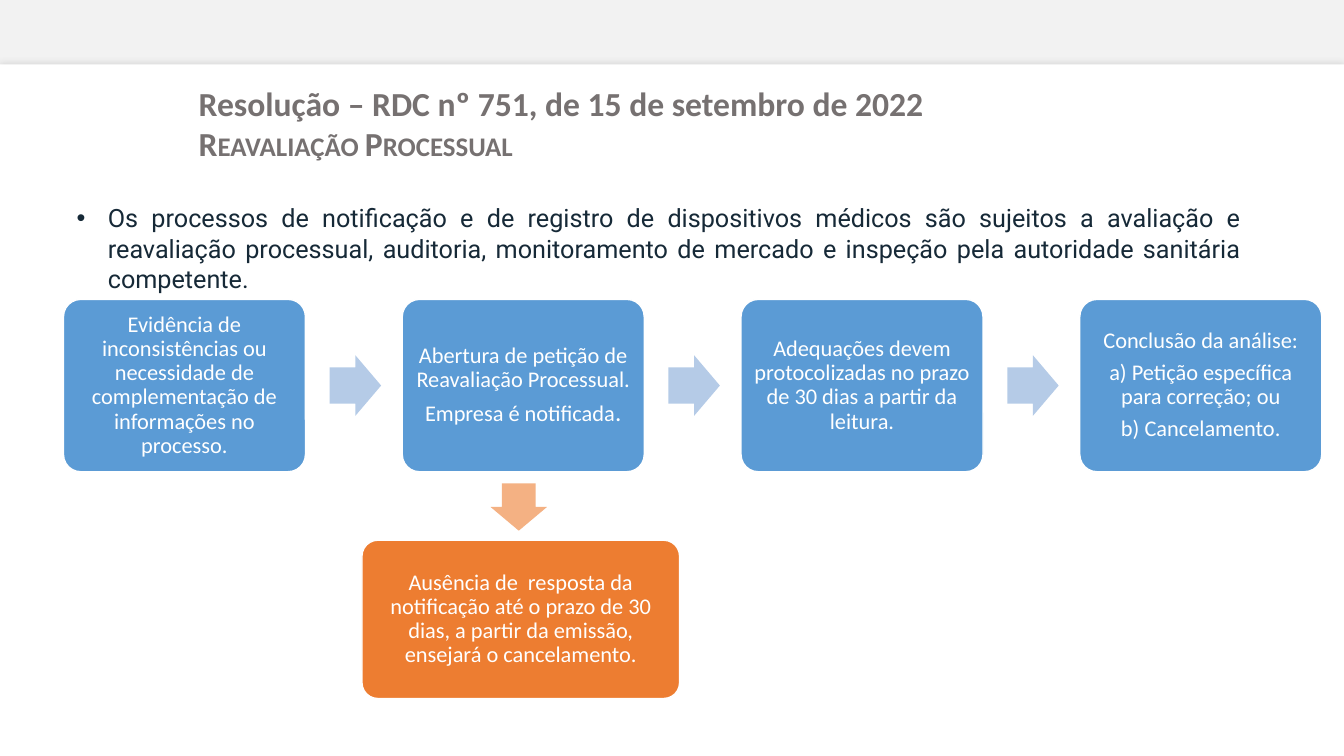
"""Builds the slide on process re-evaluation under RDC 751/2022."""
from dataclasses import dataclass

import lxml.etree
import pptx
import pptx.dml.color
import pptx.enum.shapes
import pptx.enum.text
import pptx.oxml
import pptx.oxml.ns
import pptx.util

Inches = pptx.util.Inches
Pt = pptx.util.Pt
Shapes = pptx.enum.shapes.MSO_SHAPE
Align = pptx.enum.text.PP_ALIGN
Anchor = pptx.enum.text.MSO_ANCHOR


@dataclass(frozen=True)
class Theme:
    backdrop: str = "F2F2F2"
    white: str = "FFFFFF"
    shade: str = "A6A6A6"
    heading: str = "767171"
    ink: str = "162937"
    step: str = "5B9BD5"
    step_arrow: str = "B5CBE7"
    warning: str = "ED7D31"
    warning_arrow: str = "F4B183"
    sans: str = "Calibri"
    body: str = "Roboto"
    title_size: int = 24
    body_size: int = 18
    box_size: int = 16


THEME = Theme()
WIDTH, HEIGHT = 13.33, 7.5
GRID_LEFT, GRID_TOP, COLUMN = 0.63, 2.97, 3.36
BOX_WIDTH, BOX_HEIGHT = 2.4, 1.71
ARROW_WIDTH, ARROW_HEIGHT = 0.51, 0.6
STEPS = [
    ["Evidência de inconsistências ou necessidade de complementação de informações no processo."],
    ["Abertura de petição de Reavaliação Processual.", "Empresa é notificada"],
    ["Adequações devem protocolizadas no prazo de 30 dias a partir da leitura."],
    ["Conclusão da análise:", "a) Petição específica para correção; ou", "b) Cancelamento."],
]
CANCELLATION = ["Ausência de  resposta da notificação até o prazo de 30 dias, "
                "a partir da emissão, ensejará o cancelamento."]


def rgb(value):
    return pptx.dml.color.RGBColor.from_string(value)


def style_span(span, size, color, font, bold=False):
    span.font.size, span.font.name, span.font.bold = Pt(size), font, bold
    span.font.color.rgb = rgb(color)


def add_block(page, kind, left, top, width, height, fill):
    block = page.shapes.add_shape(kind, *map(Inches, (left, top, width, height)))
    block.shadow.inherit = False
    block.fill.solid()
    block.fill.fore_color.rgb = rgb(fill)
    block.line.fill.background()
    return block


def add_panel(page):
    top = HEIGHT * 0.085
    panel = add_block(page, Shapes.RECTANGLE, 0, top, WIDTH, HEIGHT - top, THEME.white)
    effects = panel._element.spPr.find(pptx.oxml.ns.qn("a:effectLst"))
    effects.append(pptx.oxml.parse_xml(
        f'<a:outerShdw {pptx.oxml.ns.nsdecls("a")} blurRad="{Pt(5)}" dist="0" dir="0">'
        f'<a:srgbClr val="{THEME.shade}"><a:alpha val="42000"/></a:srgbClr></a:outerShdw>'))
    panel._element.getparent().insert(2, panel._element)


def add_box(page, left, top, width, height, fill, lines):
    box = add_block(page, Shapes.ROUNDED_RECTANGLE, left, top, width, height, fill)
    box.adjustments[0] = 0.1
    box.line.color.rgb = rgb(THEME.white)
    box.line.width = Pt(1)
    frame = box.text_frame
    frame.word_wrap = True
    frame.vertical_anchor = Anchor.MIDDLE
    frame.margin_left = frame.margin_right = Inches(0.07)
    frame.margin_top = frame.margin_bottom = Inches(0.07)
    frame.text = "\n".join(lines)
    for para in frame.paragraphs:
        para.alignment = Align.CENTER
        para.line_spacing = 0.9
        para.space_after = Pt(THEME.box_size * 0.35)
        style_span(para.runs[0], THEME.box_size, THEME.white, THEME.sans)
    return box


def add_arrow(page, left, top, width, height, fill, rotation=0):
    arrow = add_block(page, Shapes.RIGHT_ARROW, left, top, width, height, fill)
    arrow.adjustments[0], arrow.adjustments[1] = 0.6, 0.5
    arrow.rotation = rotation


def place_text(holder, left, top, width, height, text):
    holder.left, holder.top = Inches(left), Inches(top)
    holder.width, holder.height = Inches(width), Inches(height)
    frame = holder.text_frame
    frame.text = text
    frame.word_wrap = True
    frame.auto_size = pptx.enum.text.MSO_AUTO_SIZE.NONE
    frame.vertical_anchor = Anchor.TOP
    return frame.paragraphs


def fill_title(holder):
    paras = place_text(holder, 1.87, 0.77, 11.03, 0.91,
                       "Resolução – RDC nº 751, de 15 de setembro de 2022\nReavaliação Processual")
    for para in paras:
        para.alignment = Align.LEFT
        style_span(para.runs[0], THEME.title_size, THEME.heading, THEME.sans, True)
    paras[1].runs[0].font._element.set("cap", "small")


def fill_body(holder):
    para = place_text(holder, 0.66, 1.96, 11.75, 0.95,
                      "Os processos de notificação e de registro de dispositivos médicos são sujeitos "
                      "a avaliação e reavaliação processual, auditoria, monitoramento de mercado e "
                      "inspeção pela autoridade sanitária competente.")[0]
    props = para._p.get_or_add_pPr()
    props.set("marL", str(Inches(0.31)))
    props.set("indent", str(-Inches(0.31)))
    for tag, key, value in (("a:buFont", "typeface", "Arial"), ("a:buChar", "char", "•")):
        lxml.etree.SubElement(props, pptx.oxml.ns.qn(tag)).set(key, value)
    para.alignment = Align.JUSTIFY
    para.space_before, para.space_after = Pt(0), Pt(6)
    style_span(para.runs[0], THEME.body_size, THEME.ink, THEME.body)


def add_steps(page):
    arrow_top = GRID_TOP + (BOX_HEIGHT - ARROW_HEIGHT) / 2
    boxes = []
    for index, lines in enumerate(STEPS):
        left = GRID_LEFT + index * COLUMN
        boxes.append(add_box(page, left, GRID_TOP, BOX_WIDTH, BOX_HEIGHT, THEME.step, lines))
        if index < len(STEPS) - 1:
            add_arrow(page, left + BOX_WIDTH * 1.1, arrow_top, ARROW_WIDTH, ARROW_HEIGHT,
                      THEME.step_arrow)
    stop = boxes[1].text_frame.paragraphs[-1].add_run()
    stop.text = "."
    style_span(stop, THEME.body_size, THEME.white, THEME.sans)


def main():
    deck = pptx.Presentation()
    deck.slide_width, deck.slide_height = Inches(WIDTH), Inches(HEIGHT)
    page = deck.slides.add_slide(deck.slide_layouts[1])
    page.background.fill.solid()
    page.background.fill.fore_color.rgb = rgb(THEME.backdrop)
    add_panel(page)
    fill_title(page.shapes.title)
    fill_body(page.placeholders[1])
    add_steps(page)
    add_box(page, 3.59, 5.36, 3.15, 1.57, THEME.warning, CANCELLATION)
    add_arrow(page, 4.91, 4.75, 0.47, 0.56, THEME.warning_arrow, rotation=90)
    deck.save("out.pptx")


if __name__ == "__main__":
    main()
